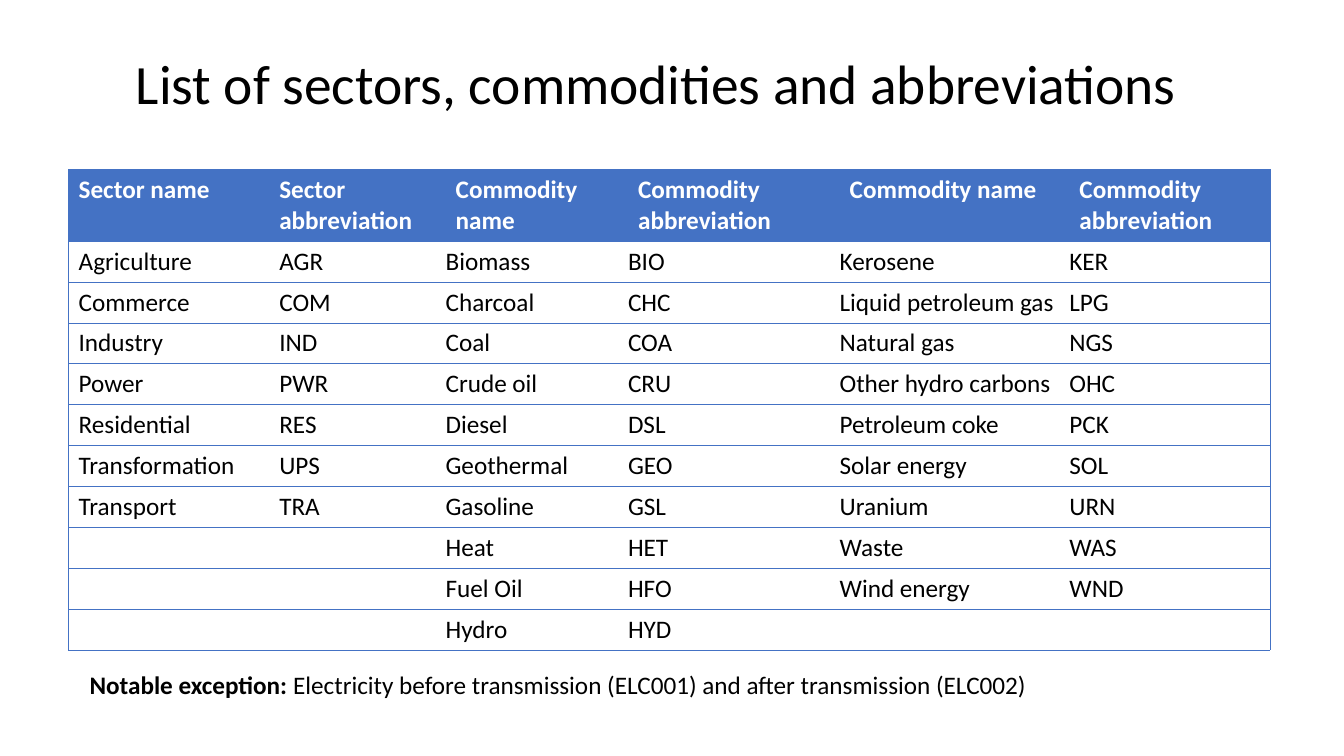
from dataclasses import dataclass

from lxml import etree
from pptx import Presentation
from pptx import util as u
from pptx.dml.color import RGBColor
from pptx.enum import text as t
from pptx.oxml import ns

BLUE = RGBColor(0x44, 0x72, 0xC4)
WHITE = RGBColor(0xFF, 0xFF, 0xFF)
BLACK = RGBColor(0, 0, 0)
FONT = "Calibri"
BORDER_WIDTH = u.Pt(0.5)
HEADER_HEIGHT, ENTRY_HEIGHT = u.Pt(51.2), u.Pt(29.2)
FIRST_COMMODITY_COLUMN = 2

BODY_FONT = {"name": FONT, "size": u.Pt(18), "bold": False}
HEADER_FONT = {**BODY_FONT, "bold": True}
TITLE_FONT = {**BODY_FONT, "size": u.Pt(39.6)}
TITLE_FRAME = {"vertical_anchor": t.MSO_ANCHOR.MIDDLE, "word_wrap": True,
               "auto_size": t.MSO_AUTO_SIZE.NONE}
NOTE_FRAME = {"word_wrap": True, "auto_size": t.MSO_AUTO_SIZE.SHAPE_TO_FIT_TEXT}
COMMODITY_CELL = {"vertical_anchor": t.MSO_ANCHOR.BOTTOM, "margin_left": 0,
                  "margin_right": 0, "margin_top": 0, "margin_bottom": u.Pt(3.6)}


@dataclass(frozen=True)
class Column:
    heading: str
    width: float
    entries: tuple[str, ...]


COLUMNS = (
    Column("Sector name", 143.3, (
        "Agriculture", "Commerce", "Industry", "Power", "Residential",
        "Transformation", "Transport")),
    Column("Sector abbreviation", 126, (
        "AGR", "COM", "IND", "PWR", "RES", "UPS", "TRA")),
    Column("Commodity name", 130.3, (
        "Biomass", "Charcoal", "Coal", "Crude oil", "Diesel", "Geothermal",
        "Gasoline", "Heat", "Fuel Oil", "Hydro")),
    Column("Commodity abbreviation", 151.2, (
        "BIO", "CHC", "COA", "CRU", "DSL", "GEO", "GSL", "HET", "HFO", "HYD")),
    Column("Commodity name", 164.1, (
        "Kerosene", "Liquid petroleum gas", "Natural gas",
        "Other hydro carbons", "Petroleum coke", "Solar energy", "Uranium",
        "Waste", "Wind energy")),
    Column("Commodity abbreviation", 143.3, (
        "KER", "LPG", "NGS", "OHC", "PCK", "SOL", "URN", "WAS", "WND")),
)


def apply(target: object, formats: dict) -> None:
    for name, value in formats.items():
        setattr(target, name, value)


def style_font(font: object, formats: dict, color: RGBColor) -> None:
    apply(font, formats)
    font.color.rgb = color


def set_borders(cell: object, left: bool, right: bool) -> None:
    properties = cell._tc.get_or_add_tcPr()
    visible = {"a:lnL": left, "a:lnR": right, "a:lnT": True, "a:lnB": True}
    for tag, shown in visible.items():
        line = etree.SubElement(properties, ns.qn(tag), w=str(BORDER_WIDTH))
        if shown:
            fill = etree.SubElement(line, ns.qn("a:solidFill"))
            etree.SubElement(fill, ns.qn("a:srgbClr"), val=str(BLUE))
        else:
            etree.SubElement(line, ns.qn("a:noFill"))


def fill_cell(cell: object, content: str, is_header: bool) -> None:
    if is_header:
        cell.fill.solid()
        cell.fill.fore_color.rgb = BLUE
    else:
        cell.fill.background()
    paragraph = cell.text_frame.paragraphs[0]
    if content:
        run = paragraph.add_run()
        run.text = content
        style_font(run.font, HEADER_FONT if is_header else BODY_FONT,
                   WHITE if is_header else BLACK)


def add_abbreviations(slide: object) -> None:
    row_count = 1 + max(len(column.entries) for column in COLUMNS)
    width = u.Pt(sum(column.width for column in COLUMNS))
    height = HEADER_HEIGHT + ENTRY_HEIGHT * (row_count - 1)
    abbreviations = slide.shapes.add_table(
        row_count, len(COLUMNS), u.Pt(49), u.Pt(121), width, height).table
    abbreviations.horz_banding = False
    for index, row in enumerate(abbreviations.rows):
        row.height = ENTRY_HEIGHT if index else HEADER_HEIGHT
    for c, column in enumerate(COLUMNS):
        abbreviations.columns[c].width = u.Pt(column.width)
        padding = ("",) * (row_count - 1 - len(column.entries))
        for r, content in enumerate((column.heading, *column.entries, *padding)):
            cell = abbreviations.cell(r, c)
            set_borders(cell, c == 0, c == len(COLUMNS) - 1)
            fill_cell(cell, content, r == 0)
            if r and content and c >= FIRST_COMMODITY_COLUMN:
                apply(cell, COMMODITY_CELL)


def add_heading(slide: object) -> None:
    heading = slide.shapes.title
    apply(heading, {"left": u.Pt(56.9), "top": u.Pt(43.2),
                    "width": u.Pt(823.7), "height": u.Pt(36.7)})
    apply(heading.text_frame, TITLE_FRAME)
    paragraph = heading.text_frame.paragraphs[0]
    apply(paragraph, {"alignment": t.PP_ALIGN.CENTER, "line_spacing": 0.9})
    run = paragraph.add_run()
    run.text = "List of sectors, commodities and abbreviations"
    style_font(run.font, TITLE_FONT, BLACK)


def add_exception(slide: object) -> None:
    exception = slide.shapes.add_textbox(
        u.Pt(56.9), u.Pt(474.5), u.Pt(849.6), u.Pt(29.1))
    apply(exception.text_frame, NOTE_FRAME)
    paragraph = exception.text_frame.paragraphs[0]
    for content, formats in (
        ("Notable exception: ", HEADER_FONT),
        ("Electricity before transmission (ELC001) and after transmission (ELC002)",
         BODY_FONT),
    ):
        run = paragraph.add_run()
        run.text = content
        style_font(run.font, formats, BLACK)


def main() -> None:
    deck = Presentation()
    apply(deck, {"slide_width": u.Pt(960), "slide_height": u.Pt(540)})
    slide = deck.slides.add_slide(deck.slide_layouts.get_by_name("Title Only"))
    add_heading(slide)
    add_abbreviations(slide)
    add_exception(slide)
    deck.save("out.pptx")


if __name__ == "__main__":
    main()
